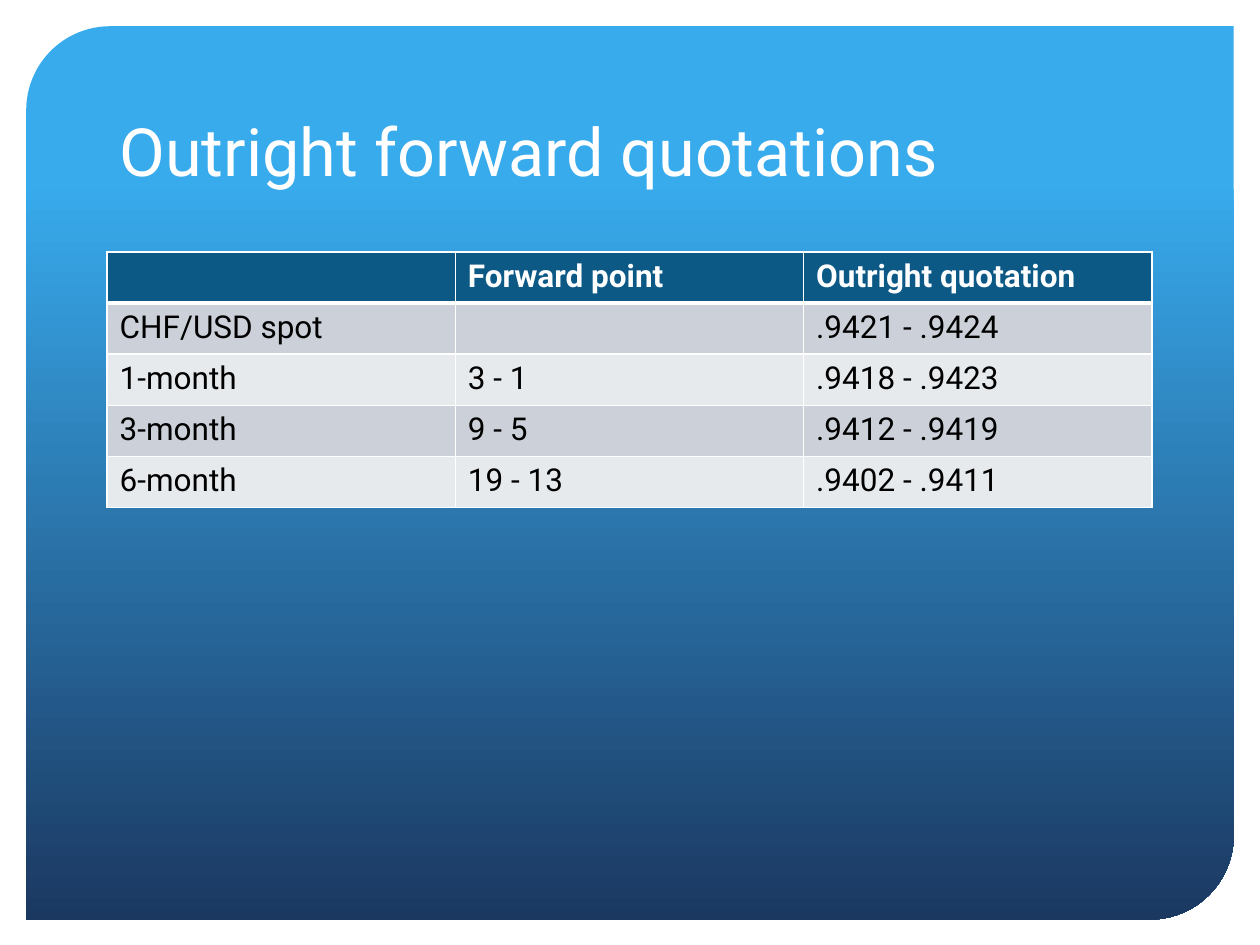
from lxml.etree import SubElement
from pptx import Presentation
from pptx.dml.color import RGBColor
from pptx.enum.shapes import MSO_SHAPE
from pptx.enum.text import MSO_ANCHOR
from pptx.oxml.ns import qn
from pptx.util import Pt

WHITE = RGBColor(0xFF, 0xFF, 0xFF)
BLACK = RGBColor(0, 0, 0)
SKY = RGBColor(0x38, 0xAB, 0xED)
NAVY = RGBColor(0x1B, 0x38, 0x61)
HEADER = RGBColor(0x0C, 0x59, 0x86)
BANDS = [RGBColor(0xE7, 0xEA, 0xED), RGBColor(0xCC, 0xD1, 0xD9)]

ROWS = [
    ["", "Forward point", "Outright quotation"],
    ["CHF/USD spot", "", ".9421 - .9424"],
    ["1-month", "3 - 1", ".9418 - .9423"],
    ["3-month", "9 - 5", ".9412 - .9419"],
    ["6-month", "19 - 13", ".9402 - .9411"],
]


def write(tf, text, size=18, color=BLACK, bold=False):
    p = tf.paragraphs[0]
    p.font.size = Pt(size)
    if text:
        r = p.add_run()
        r.text = text
        r.font.name = "Roboto"
        r.font.size = Pt(size)
        r.font.bold = bold
        r.font.color.rgb = color


def add_border(cell, side, width):
    """Draw a white line on one side of the cell: L, R, T or B."""
    ln = SubElement(cell._tc.get_or_add_tcPr(), qn(f"a:ln{side}"), w=str(Pt(width)))
    fill = SubElement(ln, qn("a:solidFill"))
    SubElement(fill, qn("a:srgbClr"), val=str(WHITE))


prs = Presentation()
prs.slide_width, prs.slide_height = Pt(720), Pt(540)
s = prs.slides.add_slide(prs.slide_layouts[6])

# Background panel
panel = s.shapes.add_shape(MSO_SHAPE.ROUND_2_DIAG_RECTANGLE, Pt(15), Pt(15), Pt(690), Pt(510.5))
panel.adjustments[0] = 0.094
panel.adjustments[1] = 0
panel.shadow.inherit = False
panel.line.fill.background()
panel.fill.gradient()
panel.fill.gradient_angle = 270
for stop, position, color in zip(panel.fill.gradient_stops, [0.17, 1], [SKY, NAVY]):
    stop.position = position
    stop.color.rgb = color

# Title
title = s.shapes.add_textbox(Pt(61.2), Pt(30.2), Pt(597), Pt(82))
tf = title.text_frame
tf.word_wrap = True
tf.vertical_anchor = MSO_ANCHOR.BOTTOM
write(tf, "Outright forward quotations", size=38, color=WHITE)

# Quotation table
table = s.shapes.add_table(len(ROWS), 3, Pt(61.2), Pt(144), Pt(597), Pt(146)).table
for row in table.rows:
    row.height = Pt(29.2)
for i, values in enumerate(ROWS):
    is_header = i == 0
    for j, value in enumerate(values):
        cell = table.cell(i, j)
        add_border(cell, "L", 1)
        add_border(cell, "R", 1)
        add_border(cell, "T", 3 if i == 1 else 1)
        add_border(cell, "B", 3 if is_header else 1)
        cell.fill.solid()
        cell.fill.fore_color.rgb = HEADER if is_header else BANDS[i % 2]
        write(cell.text_frame, value, color=WHITE if is_header else BLACK, bold=is_header)

prs.save("out.pptx")
